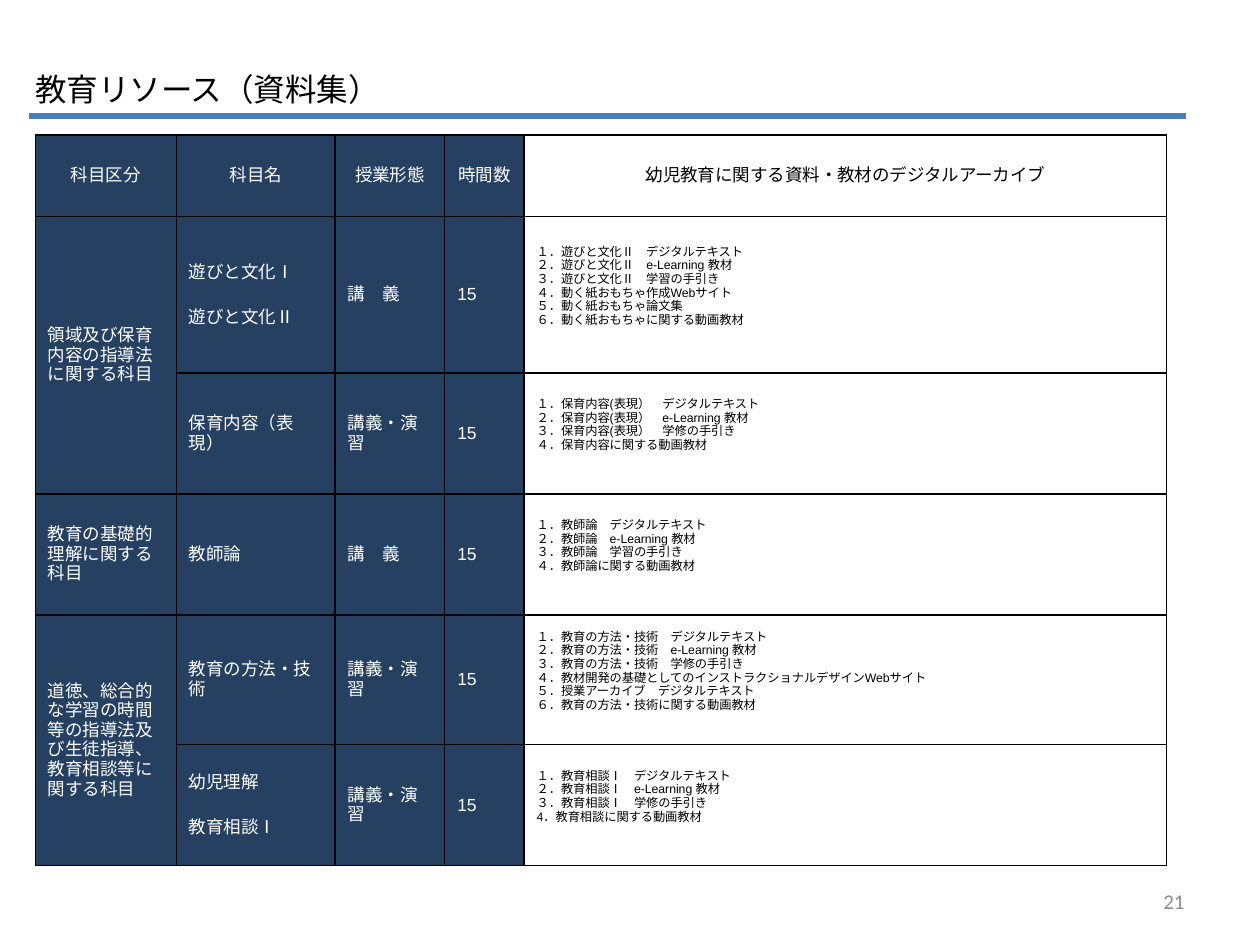
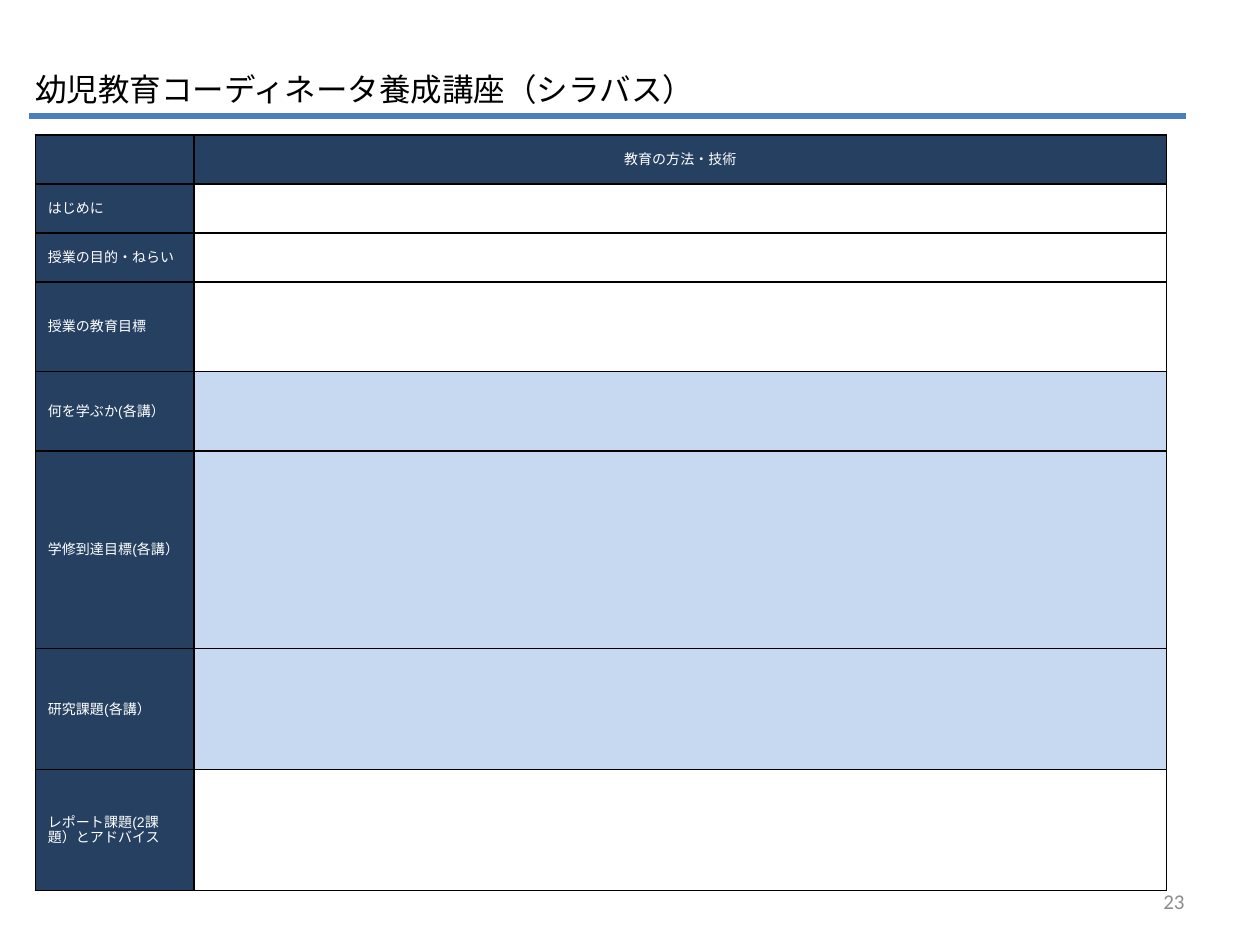
from dataclasses import dataclass
from pptx import Presentation
from pptx import util as u
from pptx.dml import color
from pptx.enum import lang, shapes, text
from pptx.oxml import ns, xmlchemy


@dataclass(frozen=True)
class Theme:
    navy: str = "254061"
    pale: str = "C6D9F1"
    rule: str = "4B7EBC"
    ink: str = "000000"
    white: str = "FFFFFF"
    grey: str = "8C8C8C"
    head: str = "Noto Sans CJK JP"
    body: str = "Arial"
    foot: str = "Calibri"
    title: float = 18
    page: float = 12
    label: float = 10
    small: float = 8
    item: float = 7


T = Theme()
MID = text.MSO_ANCHOR.MIDDLE
CENTER, RIGHT = text.PP_ALIGN.CENTER, text.PP_ALIGN.RIGHT

HEADS = ["科目区分", "科目名", "授業形態", "時間数",
         "幼児教育に関する資料・教材のデジタルアーカイブ"]
COURSES = [
    ("領域及び保育内容の指導法に関する科目", ["遊びと文化Ⅰ", "遊びと文化Ⅱ"], "講　義",
     ["１．遊びと文化Ⅱ　デジタルテキスト",
      "２．遊びと文化Ⅱ　e-Learning 教材",
      "３．遊びと文化Ⅱ　学習の手引き",
      "４．動く紙おもちゃ作成Webサイト",
      "５．動く紙おもちゃ論文集",
      "６．動く紙おもちゃに関する動画教材"]),
    (None, ["保育内容（表現）"], "講義・演習",
     ["１．保育内容(表現）　デジタルテキスト",
      "２．保育内容(表現）　e-Learning 教材",
      "３．保育内容(表現）　学修の手引き",
      "４．保育内容に関する動画教材"]),
    ("教育の基礎的理解に関する科目", ["教師論"], "講　義",
     ["１．教師論　デジタルテキスト",
      "２．教師論　e-Learning 教材",
      "３．教師論　学習の手引き",
      "４．教師論に関する動画教材"]),
    ("道徳、総合的な学習の時間等の指導法及び生徒指導、教育相談等に関する科目",
     ["教育の方法・技術"], "講義・演習",
     ["１．教育の方法・技術　デジタルテキスト",
      "２．教育の方法・技術　e-Learning 教材",
      "３．教育の方法・技術　学修の手引き",
      "４．教材開発の基礎としてのインストラクショナルデザインWebサイト",
      "５．授業アーカイブ　デジタルテキスト",
      "６．教育の方法・技術に関する動画教材"]),
    (None, ["幼児理解", "教育相談Ⅰ"], "講義・演習",
     ["１．教育相談Ⅰ　デジタルテキスト",
      "２．教育相談Ⅰ　e-Learning 教材",
      "３．教育相談Ⅰ　学修の手引き",
      "4．教育相談に関する動画教材"]),
]
PARTS = [
    ("はじめに", 0.39, None),
    ("授業の目的・ねらい", 0.39, None),
    ("授業の教育目標", 0.71, None),
    ("何を学ぶか(各講）", 0.63, T.pale),
    ("学修到達目標(各講）", 1.57, T.pale),
    ("研究課題(各講）", 0.96, T.pale),
    ("レポート課題(2課題）とアドバイス", 0.96, None),
]


def rgb(code):
    return color.RGBColor.from_string(code)


def assign(obj, form):
    for key, val in form.items():
        setattr(obj, key, val)


def write(frame, lines, size, tint, face=T.body, align=None, gap=0):
    frame.word_wrap = True
    for i, line in enumerate(lines):
        para = frame.add_paragraph() if i else frame.paragraphs[0]
        assign(para, {"alignment": align, "space_before": u.Pt(gap if i else 0)})
        run = para.add_run()
        run.text = line
        assign(run.font, {"size": u.Pt(size), "name": face, "bold": False,
                          "language_id": lang.MSO_LANGUAGE_ID.JAPANESE})
        run.font.color.rgb = rgb(tint)
        east = xmlchemy.OxmlElement("a:ea")
        east.set("typeface", face)
        run.font._element.find(ns.qn("a:latin")).addnext(east)


def label(slide, box, words, size, tint, face, align=None, anchor=None):
    frame = slide.shapes.add_textbox(*map(u.Inches, box)).text_frame
    frame.vertical_anchor = anchor
    write(frame, [words], size, tint, face, align)


def border(cell):
    props = cell._tc.get_or_add_tcPr()
    for i, side in enumerate("LRTB"):
        line = xmlchemy.OxmlElement(f"a:ln{side}")
        line.set("w", str(u.Pt(1)))
        fill = xmlchemy.OxmlElement("a:solidFill")
        tone = xmlchemy.OxmlElement("a:srgbClr")
        tone.set("val", T.ink)
        fill.append(tone)
        line.append(fill)
        props.insert(i, line)


def paint(cell, code=None):
    if code:
        cell.fill.solid()
        cell.fill.fore_color.rgb = rgb(code)
    else:
        cell.fill.background()


def grid(slide, cols, rows):
    size = [u.Inches(v) for v in (0.28, 1.07, sum(cols), sum(rows))]
    table = slide.shapes.add_table(len(rows), len(cols), *size).table
    assign(table, {"first_row": False, "horz_banding": False})
    for col, wide in zip(table.columns, cols):
        col.width = u.Inches(wide)
    for row, tall in zip(table.rows, rows):
        row.height = u.Inches(tall)
    for cell in table.iter_cells():
        cell.vertical_anchor = MID
        paint(cell)
        border(cell)
    return table


def fill(cell, lines, size, tint=T.white, back=T.navy, align=None, gap=0):
    paint(cell, back)
    write(cell.text_frame, lines, size, tint, align=align, gap=gap)


def blank(cell, back=None):
    paint(cell, back)
    assign(cell, {"margin_top": 0, "margin_bottom": 0})


def page(deck, title, number):
    slide = deck.slides.add_slide(deck.slide_layouts[6])
    label(slide, (0.18, 0.51, 9.29, 0.71), title, T.title, T.ink, T.head)
    ends = [u.Inches(v) for v in (0.23, 0.92, 9.41, 0.92)]
    rule = slide.shapes.add_connector(shapes.MSO_CONNECTOR.STRAIGHT, *ends)
    rule.line.width = u.Pt(3)
    rule.line.color.rgb = rgb(T.rule)
    rule._element.spPr.append(xmlchemy.OxmlElement("a:effectLst"))
    label(slide, (7.17, 6.95, 2.33, 0.4), number, T.page, T.grey, T.foot, RIGHT, MID)
    return slide


def courses(slide):
    table = grid(slide, [1.12, 1.26, 0.87, 0.63, 5.1],
                 [0.65, 1.24, 0.96, 0.96, 1.03, 0.96])
    for c, head in enumerate(HEADS):
        last = c == len(HEADS) - 1
        fill(table.cell(0, c), [head], T.label, T.ink if last else T.white,
             None if last else T.navy, CENTER)
    for r, (area, names, mode, items) in enumerate(COURSES, 1):
        paint(table.cell(r, 0), T.navy)
        if area:
            fill(table.cell(r, 0), [area], T.label)
        else:
            table.cell(r - 1, 0).merge(table.cell(r, 0))
        for c, lines in enumerate([names, [mode], ["15"]], 1):
            fill(table.cell(r, c), lines, T.label, gap=14.3)
        cell = table.cell(r, 4)
        cell.margin_bottom = u.Inches(0.19)
        fill(cell, items, T.item, T.ink, None)


def syllabus(slide):
    table = grid(slide, [1.26, 7.72], [0.39] + [tall for _, tall, _ in PARTS])
    blank(table.cell(0, 0), T.navy)
    fill(table.cell(0, 1), ["教育の方法・技術"], T.small, align=CENTER)
    for r, (name, _, back) in enumerate(PARTS, 1):
        fill(table.cell(r, 0), [name], T.small)
        blank(table.cell(r, 1), back)


def main():
    deck = Presentation()
    assign(deck, {"slide_width": u.Inches(10), "slide_height": u.Inches(7.5)})
    courses(page(deck, "教育リソース（資料集）", "21"))
    syllabus(page(deck, "幼児教育コーディネータ養成講座（シラバス）", "23"))
    deck.save("out.pptx")


if __name__ == "__main__":
    main()
